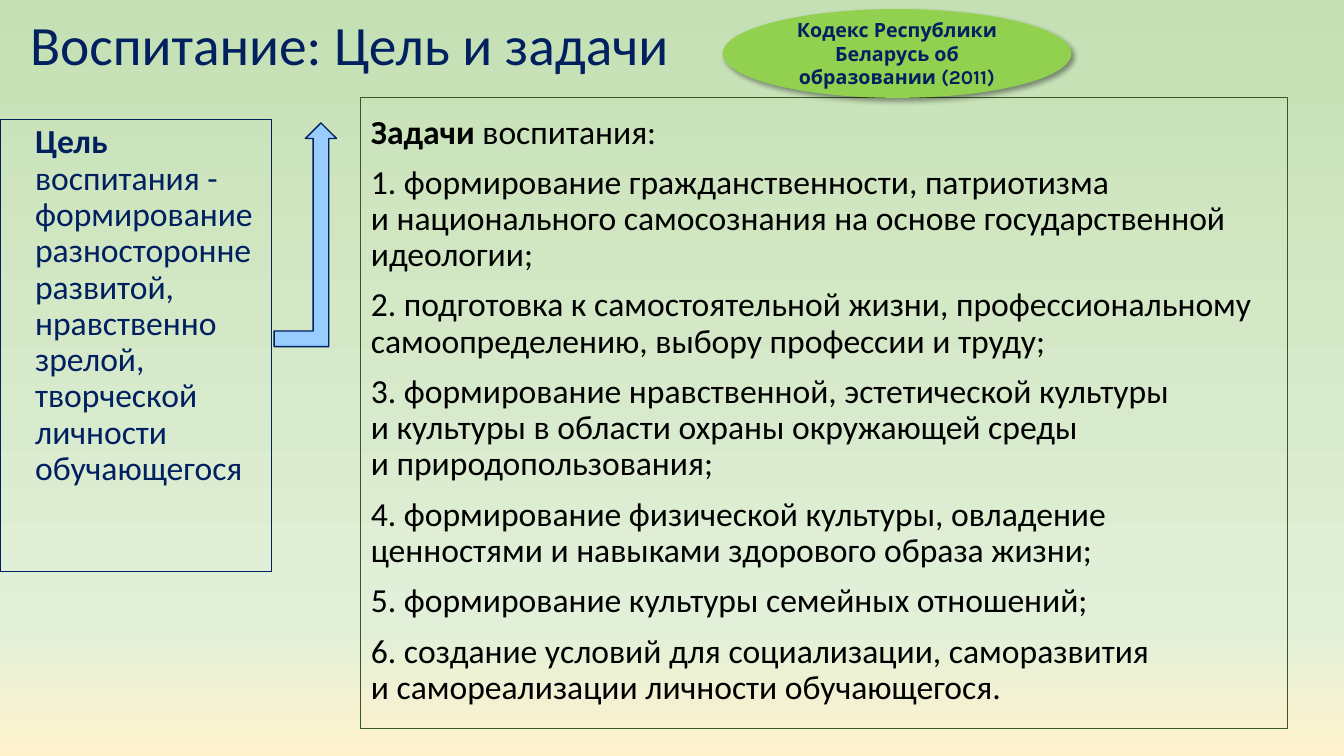
from lxml import etree
from pptx import Presentation
from pptx.dml.color import RGBColor
from pptx.enum.shapes import MSO_SHAPE
from pptx.enum.text import MSO_ANCHOR, PP_ALIGN
from pptx.oxml.ns import qn
from pptx.util import Pt

RECTANGLE, ELLIPSE = MSO_SHAPE.RECTANGLE, MSO_SHAPE.OVAL
BENT_ARROW = MSO_SHAPE.BENT_UP_ARROW
TOP, MIDDLE = MSO_ANCHOR.TOP, MSO_ANCHOR.MIDDLE
LEFT, CENTER = PP_ALIGN.LEFT, PP_ALIGN.CENTER

# Content: "_" marks a non-breaking space, each paragraph is (bold part, plain part)
TITLE = [("", "Воспитание: Цель и задачи")]
GOAL = [("Цель", " воспитания - формирование разносторонне развитой, "
         "нравственно зрелой, творческой личности обучающегося")]
TASKS_HEADING = ("Задачи", " воспитания:")
TASKS = [
    "формирование гражданственности, патриотизма и_национального "
    "самосознания на_основе государственной идеологии;",
    "подготовка к_самостоятельной жизни, профессиональному "
    "самоопределению, выбору профессии и_труду;",
    "формирование нравственной, эстетической культуры и_культуры "
    "в_области охраны окружающей среды и_природопользования;",
    "формирование физической культуры, овладение ценностями "
    "и_навыками здорового образа жизни;",
    "формирование культуры семейных отношений;",
    "создание условий для_социализации, саморазвития "
    "и_самореализации личности обучающегося.",
]
TASK_LIST = [TASKS_HEADING] + [
    ("", f"{number}._{task}") for number, task in enumerate(TASKS, 1)]
CODE = [("Кодекс Республики Беларусь об образовании (2011)", "")]

THEME = {
    "navy": "002060", "black": "000000", "dark green": "385723",
    "lime": "92D050", "sky": "99CCFF",
    "background": [(0, "C5E0B4"), (83, "E2F0D9"), (100, "FFF2CC")],
    "font": "Calibri", "code font": "Karla",
    "title size": 39.6, "body size": 24, "code size": 14,
}

# Places in points: left, top, width, height
SLIDE_SIZE = (960, 540)
TITLE_BOX = (14.4, 9.4, 661.7, 49)
GOAL_BOX = (0, 85.7, 193.7, 322.6)
TASKS_BOX = (257.8, 69.8, 661.7, 450.7)
CODE_BOX = (516.2, 6.5, 249.1, 63.4)
ARROW_BOX = (195.8, 87.8, 44.6, 159.8)


def color(name):
    return RGBColor.from_string(THEME[name])


def add_block(slide, kind, box, fill=None, line=None, line_width=0.75):
    shape = slide.shapes.add_shape(kind, *map(Pt, box))
    shape.shadow.inherit = False
    if fill:
        shape.fill.solid()
        shape.fill.fore_color.rgb = color(fill)
    else:
        shape.fill.background()
    if line:
        shape.line.color.rgb = color(line)
        shape.line.width = Pt(line_width)
    else:
        shape.line.fill.background()
    return shape


def write(shape, paragraphs, size, ink, font="font", anchor=TOP, indent=0, **layout):
    frame = shape.text_frame
    frame.word_wrap = True
    frame.vertical_anchor = anchor
    for index, parts in enumerate(paragraphs):
        paragraph = frame.add_paragraph() if index else frame.paragraphs[0]
        for name, value in {"alignment": LEFT, **layout}.items():
            setattr(paragraph, name, value)
        if indent:
            properties = paragraph._p.get_or_add_pPr()
            properties.set("marL", str(Pt(indent)))
            properties.set("indent", "0")
        for text, bold in zip(parts, (True, False)):
            if not text:
                continue
            run = paragraph.add_run()
            run.text = text.replace("_", chr(160))
            run.font.color.rgb = color(ink)
            formats = {"name": THEME[font], "size": Pt(THEME[size]), "bold": bold}
            for name, value in formats.items():
                setattr(run.font, name, value)


def add_color(parent, value):
    return etree.SubElement(parent, qn("a:srgbClr"), val=value)


def paint_background(slide):
    fill = slide.background.fill
    fill.gradient()
    fill.gradient_angle = 270
    stops = next(slide.element.iter(qn("a:gsLst")))
    for stop in list(stops):
        stops.remove(stop)
    for percent, value in THEME["background"]:
        add_color(etree.SubElement(stops, qn("a:gs"), pos=str(percent * 1000)), value)


def add_shadow(shape):
    effects = next(shape.element.iter(qn("a:effectLst")))
    shadow = etree.SubElement(
        effects, qn("a:outerShdw"), blurRad=str(Pt(4)), dist=str(Pt(3)),
        dir=str(45 * 60000), algn="tl", rotWithShape="0")
    etree.SubElement(add_color(shadow, THEME["black"]), qn("a:alpha"), val="40000")


def main():
    presentation = Presentation()
    presentation.slide_width, presentation.slide_height = map(Pt, SLIDE_SIZE)
    slide = presentation.slides.add_slide(presentation.slide_layouts[6])
    paint_background(slide)

    # Title
    title = slide.shapes.add_textbox(*map(Pt, TITLE_BOX))
    write(title, TITLE, "title size", "navy", anchor=MIDDLE, line_spacing=0.9)

    # Goal and tasks
    body = {"line_spacing": 0.9, "space_before": Pt(10)}
    goal = add_block(slide, RECTANGLE, GOAL_BOX, line="navy")
    write(goal, GOAL, "body size", "navy", indent=18, **body)
    tasks = add_block(slide, RECTANGLE, TASKS_BOX, line="dark green")
    write(tasks, TASK_LIST, "body size", "black", **body)
    tasks.text_frame.paragraphs[0].line_spacing = 1.2

    # Code reference
    code = add_block(slide, ELLIPSE, CODE_BOX, fill="lime")
    add_shadow(code)
    write(code, CODE, "code size", "navy", font="code font",
          anchor=MIDDLE, alignment=CENTER)

    # Arrow from goal to tasks
    add_block(slide, BENT_ARROW, ARROW_BOX, fill="sky", line="navy", line_width=1)

    presentation.save("out.pptx")


if __name__ == "__main__":
    main()
